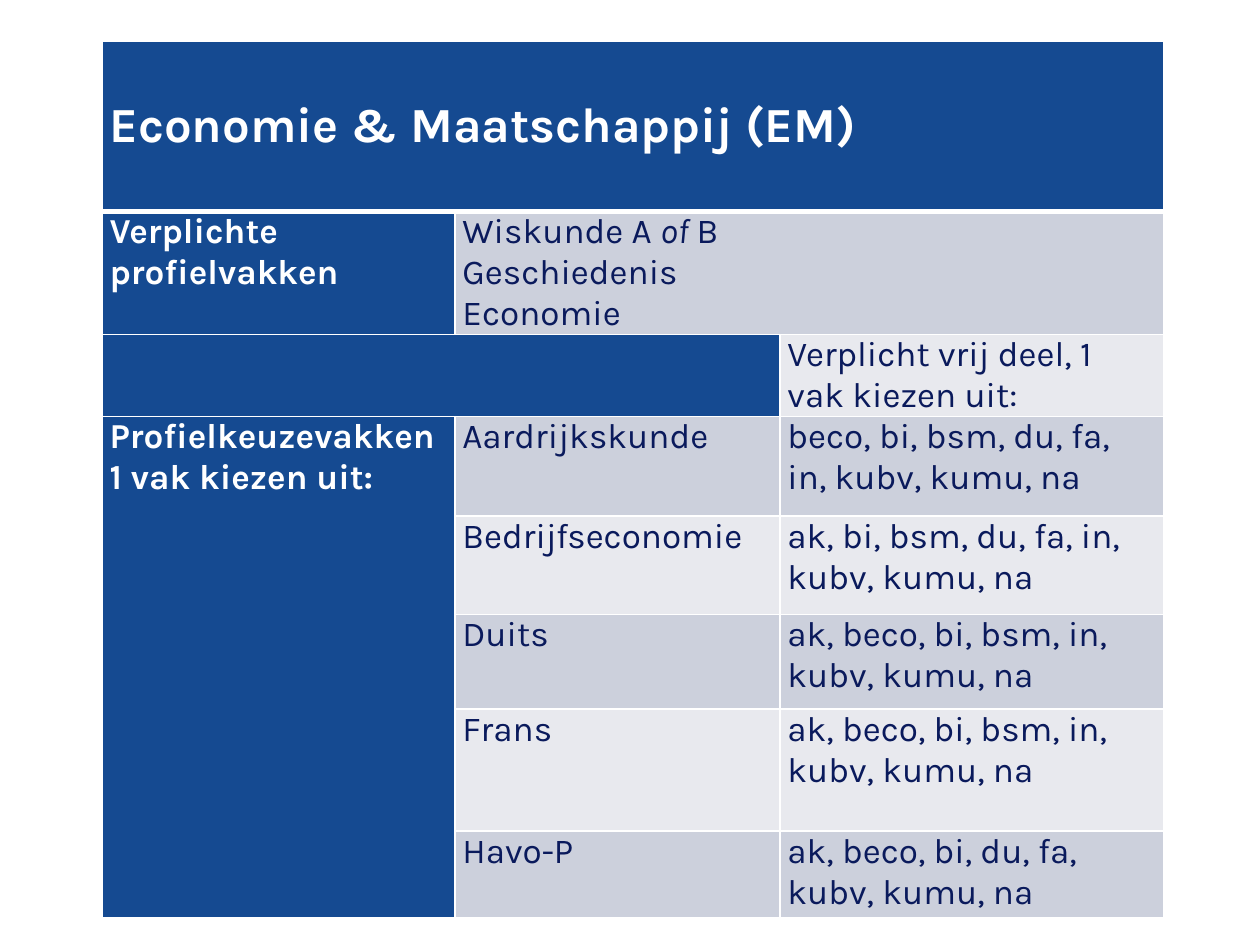
from dataclasses import dataclass
from typing import NamedTuple

from lxml.etree import SubElement as Sub
from pptx import Presentation
from pptx.dml.color import RGBColor as Rgb
from pptx.enum.text import MSO_ANCHOR as Anchor
from pptx.oxml.ns import qn
from pptx.table import Table, _Cell as Cell
from pptx.util import Inches, Pt


@dataclass(frozen=True)
class Theme:
    font: str = "Karla"
    blue: str = "154A91"
    navy: str = "0A1A5C"
    white: str = "FFFFFF"
    dark: str = "CCD0DC"
    light: str = "E8E9EE"
    head: int = 28
    body: int = 20
    thin: int = 1
    thick: int = 3


class Run(NamedTuple):
    text: str
    slant: bool = False


class Box(NamedTuple):
    row: int
    col: int
    lines: list[list[Run]]
    fill: str
    rows: int = 1
    cols: int = 1
    size: int = 20


class Choice(NamedTuple):
    main: str
    free: str


THEME = Theme()
WIDTHS = [2.8, 2.58, 3.05]
HEIGHTS = [1.35, 0.97, 0.65, 0.79, 0.78, 0.75, 0.97, 0.69]
FIRST = 3
CHOICES = [
    Choice("Aardrijkskunde", "beco, bi, bsm, du, fa, in, kubv, kumu, na"),
    Choice("Bedrijfseconomie", "ak, bi, bsm, du, fa, in, kubv, kumu, na"),
    Choice("Duits", "ak, beco, bi, bsm, in, kubv, kumu, na"),
    Choice("Frans", "ak, beco, bi, bsm, in, kubv, kumu, na"),
    Choice("Havo-P", "ak, beco, bi, du, fa, kubv, kumu, na"),
]


def plain(text: str) -> list[list[Run]]:
    return [[Run(text)]]


def boxes() -> list[Box]:
    blue, dark, light = THEME.blue, THEME.dark, THEME.light
    terms = [[Run("Wiskunde A "), Run("of", True), Run(" B")],
             [Run("Geschiedenis")], [Run("Economie")]]
    out = [
        Box(0, 0, plain("Economie & Maatschappij (EM)"), blue, cols=3, size=THEME.head),
        Box(1, 0, plain("Verplichte profielvakken"), blue),
        Box(1, 1, terms, dark, cols=2),
        Box(2, 0, [], blue, cols=2),
        Box(2, 2, plain("Verplicht vrij deel, 1 vak kiezen uit:"), light),
        Box(FIRST, 0, plain("Profielkeuzevakken 1 vak kiezen uit:"), blue, rows=len(CHOICES)),
    ]
    for i, choice in enumerate(CHOICES):
        fill = light if i % 2 else dark
        out += [Box(FIRST + i, col, plain(text), fill)
                for col, text in enumerate(choice, 1)]
    return out


def edge(cell: Cell, row: int) -> None:
    props = cell._tc.get_or_add_tcPr()
    for side in ("L", "R", "T", "B"):
        wide = (row, side) in ((0, "B"), (1, "T"))
        line = Sub(props, qn(f"a:ln{side}"), w=str(Pt(THEME.thick if wide else THEME.thin)))
        fill = Sub(line, qn("a:solidFill"))
        Sub(fill, qn("a:srgbClr"), val=THEME.white)


def write(cell: Cell, box: Box) -> None:
    bold = box.fill == THEME.blue
    color = THEME.white if bold else THEME.navy
    frame = cell.text_frame
    for i, line in enumerate(box.lines):
        para = frame.add_paragraph() if i else frame.paragraphs[0]
        for part in line:
            run = para.add_run()
            run.text = part.text
            font = run.font
            font.name, font.size = THEME.font, Pt(box.size)
            font.bold, font.italic = bold, part.slant
            font.color.rgb = Rgb.from_string(color)


def draw(table: Table, box: Box) -> None:
    cell = table.cell(box.row, box.col)
    for row in range(box.row, box.row + box.rows):
        for col in range(box.col, box.col + box.cols):
            part = table.cell(row, col)
            edge(part, row)
            part.fill.solid()
            part.fill.fore_color.rgb = Rgb.from_string(box.fill)
            part.margin_left = part.margin_right = Inches(0.06)
            part.margin_top = part.margin_bottom = 0
    if box.rows * box.cols > 1:
        cell.merge(table.cell(box.row + box.rows - 1, box.col + box.cols - 1))
    cell.vertical_anchor = Anchor.MIDDLE if box.row == 0 else Anchor.TOP
    write(cell, box)


def main() -> None:
    deck = Presentation()
    deck.slide_width, deck.slide_height = Inches(10), Inches(7.5)
    slide = deck.slides.add_slide(deck.slide_layouts[6])
    table = slide.shapes.add_table(
        len(HEIGHTS), len(WIDTHS), Inches(0.81), Inches(0.33),
        Inches(sum(WIDTHS)), Inches(sum(HEIGHTS))).table
    table.first_row = table.horz_banding = False
    for col, width in zip(table.columns, WIDTHS):
        col.width = Inches(width)
    for row, height in zip(table.rows, HEIGHTS):
        row.height = Inches(height)
    for box in boxes():
        draw(table, box)
    deck.save("out.pptx")


if __name__ == "__main__":
    main()
